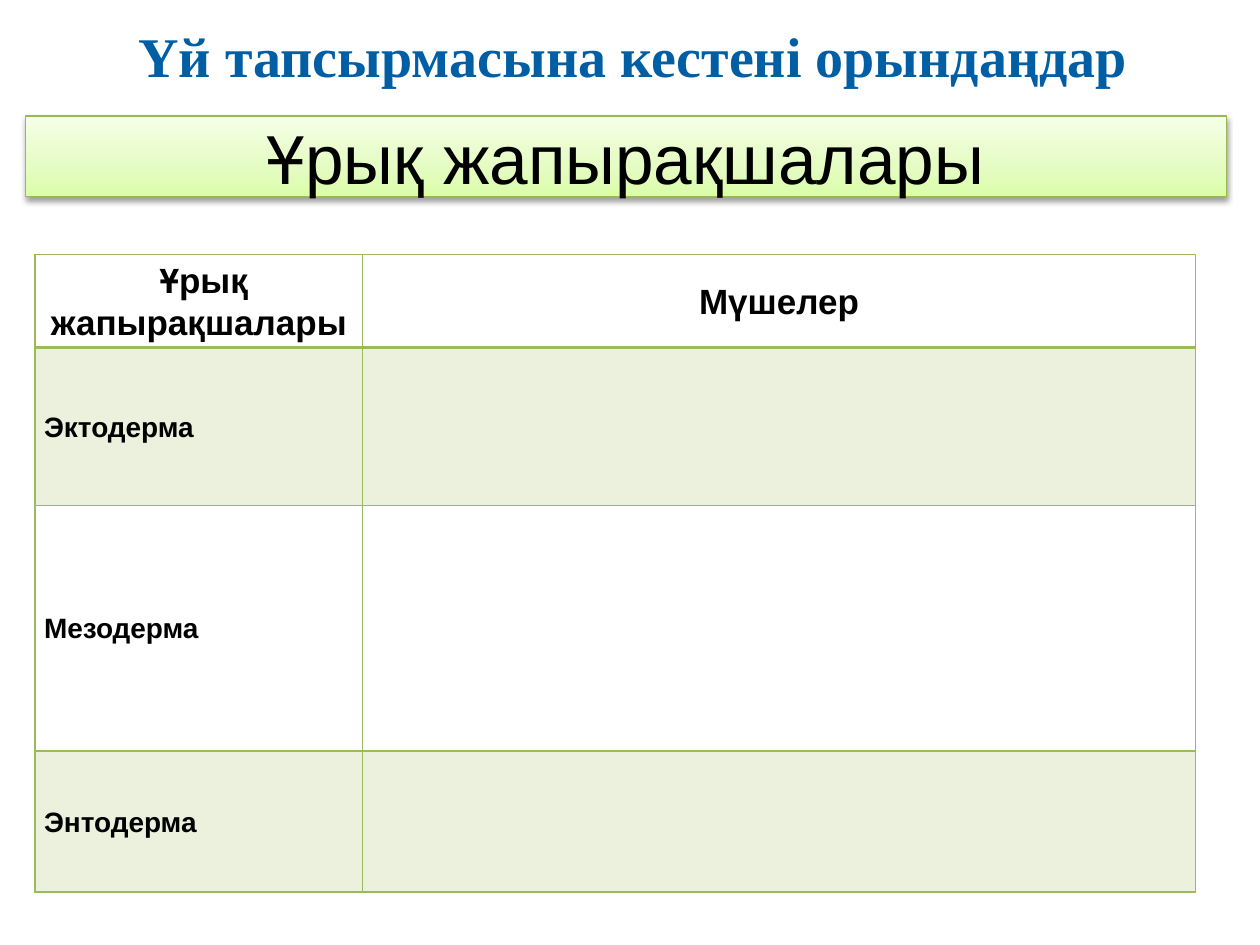
"""Builds a homework slide with a germ layer table to fill in."""
from copy import deepcopy
from dataclasses import dataclass

from lxml.etree import SubElement as Sub
from pptx import Presentation
from pptx.dml.color import RGBColor as Rgb
from pptx.enum.shapes import MSO_SHAPE as Form
from pptx.enum.text import MSO_ANCHOR as Anchor, PP_ALIGN as Align
from pptx.oxml.ns import qn
from pptx.util import Cm, Pt


@dataclass(frozen=True)
class Theme:
    ink: str = "000000"
    blue: str = "005EA4"
    green: str = "9BBB59"
    edge: str = "98B955"
    fade: tuple = ((0, "DAFDA7"), (0.35, "E4FCC2"), (1, "F5FFE7"))
    sans: str = "Arial"
    serif: str = "Times New Roman"
    title: float = 32
    banner: float = 39.6
    head: float = 20
    body: float = 16


def write(frame, text, size, font, color, bold=False, align=Align.LEFT, lead=None):
    para = frame.paragraphs[0]
    para.alignment = align
    para.line_spacing = lead
    run = para.add_run()
    run.text = text
    run.font.size = Pt(size)
    run.font.name = font
    run.font.bold = bold
    run.font.color.rgb = Rgb.from_string(color)


class Deck:
    def __init__(self, look):
        self.look = look
        self.file = Presentation()
        self.file.slide_width, self.file.slide_height = Cm(25.4), Cm(19.05)
        self.page = self.file.slides.add_slide(self.file.slide_layouts[6])

    def title(self, text, *box):
        frame = self.page.shapes.add_textbox(*map(Cm, box)).text_frame
        frame.word_wrap = True
        write(frame, text, self.look.title, self.look.serif, self.look.blue, bold=True)

    def banner(self, text, *box):
        look = self.look
        shape = self.page.shapes.add_shape(Form.RECTANGLE, *map(Cm, box))
        shape.line.color.rgb = Rgb.from_string(look.edge)
        shape.line.width = Pt(0.75)
        self.blend(shape)
        self.shade(shape)
        frame = shape.text_frame
        frame.word_wrap = True
        frame.vertical_anchor = Anchor.MIDDLE
        write(frame, text, look.banner, look.sans, look.ink, align=Align.CENTER)

    def blend(self, shape):
        fill = shape.fill
        fill.gradient()
        fill.gradient_angle = 90
        stops = shape.element.spPr.find(f".//{qn('a:gsLst')}")
        stops.insert(1, deepcopy(stops[0]))
        for stop, (place, color) in zip(fill.gradient_stops, self.look.fade):
            stop.position = place
            stop.color.rgb = Rgb.from_string(color)

    def shade(self, shape):
        shape.shadow.inherit = False
        effect = shape.element.spPr.find(qn("a:effectLst"))
        cast = Sub(effect, qn("a:outerShdw"), blurRad="40000", dist="20000",
                   dir="5400000", rotWithShape="0")
        color = Sub(cast, qn("a:srgbClr"), val=self.look.ink)
        Sub(color, qn("a:alpha"), val="38000")

    def table(self, left, top, cols, rows, texts):
        look = self.look
        size = len(rows), len(cols)
        grid = self.page.shapes.add_table(
            *size, Cm(left), Cm(top), Cm(sum(cols)), Cm(sum(rows))).table
        grid.first_row = grid.horz_banding = False
        for col, width in zip(grid.columns, cols):
            col.width = Cm(width)
        for row, (line, height) in enumerate(zip(grid.rows, rows)):
            line.height = Cm(height)
            for cell, text in zip(line.cells, texts[row]):
                self.frame(cell, row)
                self.tint(cell, row % 2 == 1)
                cell.vertical_anchor = Anchor.MIDDLE
                cell.margin_left = cell.margin_right = Cm(0.18)
                cell.margin_top = cell.margin_bottom = 0
                if text:
                    write(cell.text_frame, text, look.body if row else look.head,
                          look.sans, look.ink, bold=True, lead=1.07,
                          align=Align.JUSTIFY if row else Align.CENTER)

    def frame(self, cell, row):
        thick = {(0, "B"), (1, "T")}
        prop = cell._tc.get_or_add_tcPr()
        for side in "LRTB":
            width = Pt(2 if (row, side) in thick else 1)
            line = Sub(prop, qn(f"a:ln{side}"), w=str(width))
            Sub(Sub(line, qn("a:solidFill")), qn("a:srgbClr"), val=self.look.green)

    def tint(self, cell, shown):
        if not shown:
            cell.fill.background()
            return
        cell.fill.solid()
        cell.fill.fore_color.rgb = Rgb.from_string(self.look.green)
        color = cell._tc.tcPr.find(f"{qn('a:solidFill')}/{qn('a:srgbClr')}")
        Sub(color, qn("a:alpha"), val="20000")


def main():
    deck = Deck(Theme())
    deck.banner("Ұрық жапырақшалары", 0.51, 2.34, 24.21, 1.63)
    layers = "Эктодерма", "Мезодерма", "Энтодерма"
    texts = [(" Ұрық жапырақшалары", "Мүшелер"), *((name, "") for name in layers)]
    deck.table(0.71, 5.13, (6.6, 16.79), (1.88, 3.18, 4.95, 2.84), texts)
    deck.title("Үй тапсырмасына кестені орындаңдар", 2.54, 0.3, 21.56, 1.65)
    deck.file.save("out.pptx")


if __name__ == "__main__":
    main()
